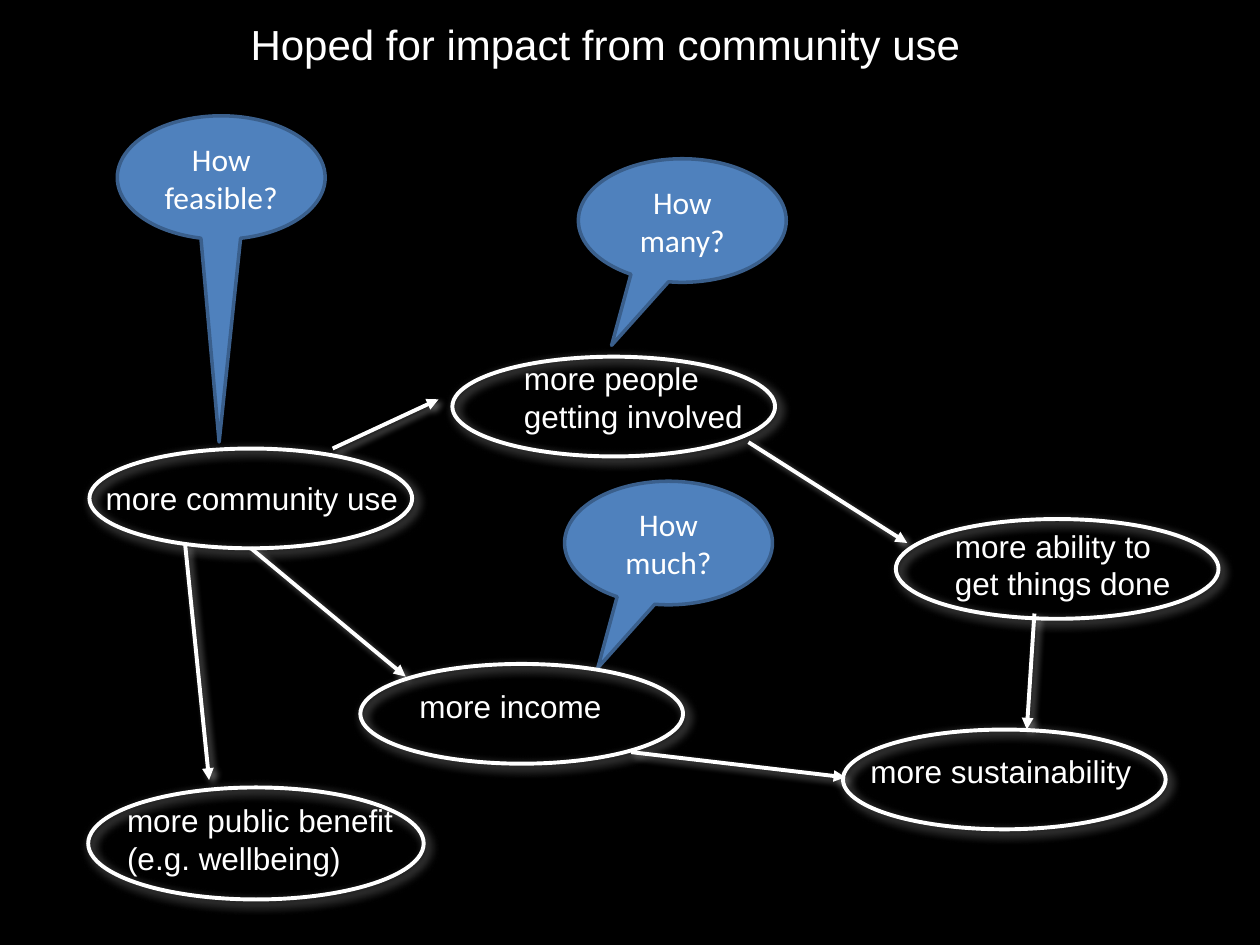
from lxml.etree import SubElement
from pptx import Presentation
from pptx.dml.color import RGBColor
from pptx.enum.shapes import MSO_CONNECTOR, MSO_SHAPE
from pptx.enum.text import MSO_ANCHOR, PP_ALIGN
from pptx.oxml.ns import qn
from pptx.util import Pt

WHITE, BLACK, BLUE, NAVY = "FFFFFF", "000000", "4F81BD", "3A5F8C"

# label, label left and top, oval left, top, width and height
NODES = [
    ("more community use", 53.3, 270, 51.1, 256.3, 184.4, 57),
    ("more people\ngetting involved", 292.3, 201.6, 258.5, 203.8, 184.4, 57),
    ("more ability to\nget things done", 538.6, 297.4, 511.9, 296.6, 184.4, 57),
    ("more sustainability", 490.3, 426.2, 481.7, 416.9, 184.4, 57),
    ("more income", 232.6, 388.8, 205.9, 379.4, 184.4, 57),
    ("more public benefit\n(e.g. wellbeing)", 65.5, 454.3, 50.4, 450, 191.7, 64),
]
# start x and y, end x and y
ARROWS = [
    (143.3, 313.2, 231.8, 386.6),
    (360.7, 429.8, 483.1, 444.2),
    (190.1, 256.3, 250.6, 228.2),
    (427.7, 252.7, 518.4, 310.3),
    (591.1, 350.6, 586.8, 416.9),
    (105.8, 311, 119.5, 445.7),
]
# question, left, top, tip as a share of width and height from the centre
CALLS = [
    ("How much?", 322.6, 275, -0.34, 1.01),
    ("How feasible?", 67, 66.2, -0.01, 2.14),
    ("How many?", 330.5, 90.7, -0.34, 1.01),
]


def color(text):
    return RGBColor.from_string(text)


def glow(shape, alpha, blur):
    """Add a soft white shadow down and to the right."""
    props = shape._element.spPr
    effects = props.find(qn("a:effectLst"))
    if effects is None:
        effects = SubElement(props, qn("a:effectLst"))
    shade = SubElement(effects, qn("a:outerShdw"), blurRad=str(Pt(blur)),
                       dist=str(Pt(3)), dir="2700000", algn="tl",
                       rotWithShape="0")
    tint = SubElement(shade, qn("a:srgbClr"), val=WHITE)
    SubElement(tint, qn("a:alpha"), val=str(alpha * 1000))


class Board:
    """Holds the style and the current slide."""
    face, size, width = "Arial", 18, 2.25

    def __init__(self, slide):
        self.slide = slide
        self.shapes = slide.shapes
        fill = slide.background.fill
        fill.solid()
        fill.fore_color.rgb = color(BLACK)

    def letter(self, shape, text, face=face, size=size, align=PP_ALIGN.LEFT):
        """Put styled text into a shape."""
        para = shape.text_frame.paragraphs[0]
        para.text = text
        para.alignment = align
        para.font.name = face
        para.font.size = Pt(size)
        para.font.color.rgb = color(WHITE)

    def stroke(self, shape, tone=WHITE, width=width):
        shape.line.color.rgb = color(tone)
        shape.line.width = Pt(width)

    def title(self, text, left, top, width, height):
        shape = self.shapes.title
        shape.left, shape.top = Pt(left), Pt(top)
        shape.width, shape.height = Pt(width), Pt(height)
        shape.text_frame.vertical_anchor = MSO_ANCHOR.MIDDLE
        self.letter(shape, text, size=24, align=PP_ALIGN.CENTER)

    def label(self, text, left, top):
        box = self.shapes.add_textbox(Pt(left), Pt(top), Pt(226.8), Pt(28))
        box.text_frame.word_wrap = True
        self.letter(box, text)

    def arrow(self, *ends):
        line = self.shapes.add_connector(MSO_CONNECTOR.STRAIGHT,
                                         *map(Pt, ends))
        self.stroke(line)
        edge = line._element.spPr.find(qn("a:ln"))
        SubElement(edge, qn("a:tailEnd"), type="triangle")
        glow(line, 40, 4)

    def shape(self, kind, *place):
        shape = self.shapes.add_shape(kind, *map(Pt, place))
        shape.shadow.inherit = False
        return shape

    def oval(self, *place):
        oval = self.shape(MSO_SHAPE.OVAL, *place)
        oval.fill.background()
        self.stroke(oval)
        glow(oval, 51, 6)

    def call(self, text, left, top, *tip):
        call = self.shape(MSO_SHAPE.OVAL_CALLOUT, left, top, 118.8, 70.6)
        for i, value in enumerate(tip):
            call.adjustments[i] = value
        call.fill.solid()
        call.fill.fore_color.rgb = color(BLUE)
        self.stroke(call, NAVY, 2)
        call.text_frame.vertical_anchor = MSO_ANCHOR.MIDDLE
        self.letter(call, text, "Calibri", align=PP_ALIGN.CENTER)


def main():
    deck = Presentation()
    deck.slide_width, deck.slide_height = Pt(720), Pt(540)
    board = Board(deck.slides.add_slide(deck.slide_layouts[5]))
    board.title("Hoped for impact from community use", 87.8, 9.4, 516.2, 31)
    for text, left, top, *_ in NODES:
        board.label(text, left, top)
    for ends in ARROWS:
        board.arrow(*ends)
    for item in CALLS:
        board.call(*item)
    for _, _, _, *place in NODES:
        board.oval(*place)
    deck.save("out.pptx")


if __name__ == "__main__":
    main()
